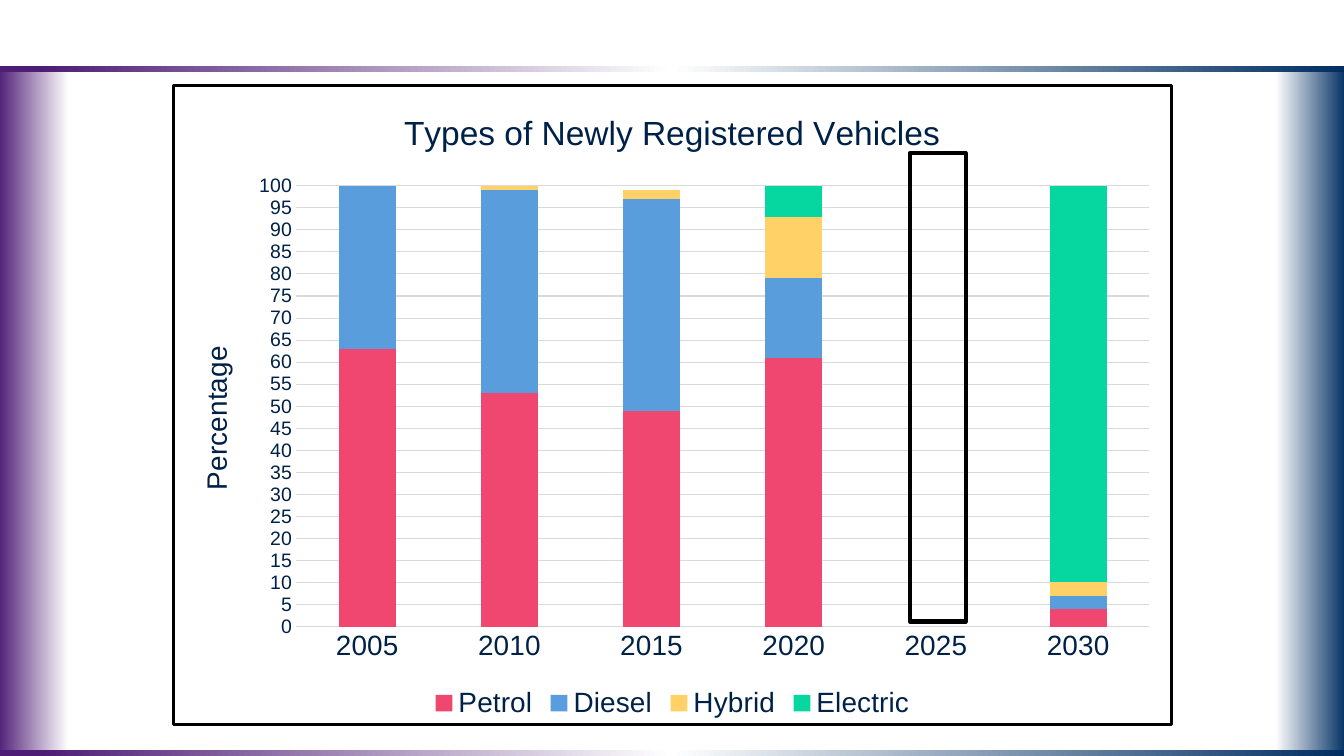
from pptx import Presentation
from pptx import util as u
from pptx.chart.data import CategoryChartData
from pptx.dml.color import RGBColor
from pptx.enum import chart as charts, shapes
from pptx.oxml import parse_xml
from pptx.oxml.ns import nsdecls, qn

PURPLE, WHITE, BLUE, NAVY, GREY, BLACK = "4D1C74", "FFFFFF", "002D61", "002147", "D9D9D9", "000000"
color = RGBColor.from_string


def style_font(font, size):
    font.name = "Arial"
    font.size = u.Pt(size)
    font.bold = False
    font.color.rgb = color(NAVY)


def place(element, index, **fractions):
    """Give a chart part a manual layout, in fractions of the chart's size."""
    old_layout = element.find(qn("c:layout"))
    if old_layout is not None:
        element.remove(old_layout)
    target = '<c:layoutTarget val="inner"/>' if "w" in fractions else ""
    modes = '<c:xMode val="edge"/><c:yMode val="edge"/>'
    values = "".join(f'<c:{key} val="{value}"/>' for key, value in fractions.items())
    element.insert(index, parse_xml(
        f'<c:layout {nsdecls("c")}><c:manualLayout>{target}{modes}{values}</c:manualLayout></c:layout>'))


presentation = Presentation()
presentation.slide_width, presentation.slide_height = u.Pt(960), u.Pt(540)
slide = presentation.slides.add_slide(presentation.slide_layouts[6])

# Gradient frame
bar_stops = [(3, PURPLE), (50, WHITE), (100, BLUE)]
frame = [
    (-2, 48.5, 51, 491, [(0, PURPLE), (100, WHITE)]),
    (911, 48.5, 51, 491, [(0, WHITE), (100, BLUE)]),
    (-1, 535.7, 962, 4.3, bar_stops),
    (-1, 47.3, 962, 4.3, bar_stops),
]
for left, top, width, height, stops in frame:
    band = slide.shapes.add_shape(shapes.MSO_SHAPE.RECTANGLE, *map(u.Pt, (left, top, width, height)))
    band.shadow.inherit = False
    band.line.fill.background()
    band.fill.gradient()
    band.fill.gradient_angle = 0
    stop_list = band._element.spPr.find(qn("a:gradFill")).find(qn("a:gsLst"))
    for old_stop in list(stop_list):
        stop_list.remove(old_stop)
    for position, hex_color in stops:
        stop_list.append(parse_xml(
            f'<a:gs {nsdecls("a")} pos="{position * 1000}"><a:srgbClr val="{hex_color}"/></a:gs>'))

# Stacked column chart
data = CategoryChartData()
data.categories = ["2005", "2010", "2015", "2020", "2025", "2030"]
vehicles = [
    ("Petrol", "EF476F", [63, 53, 49, 61, None, 4]),
    ("Diesel", "599DDC", [37, 46, 48, 18, None, 3]),
    ("Hybrid", "FFD166", [0, 1, 2, 14, None, 3]),
    ("Electric", "06D6A0", [0, 0, 0, 7, None, 90]),
]
for name, _, values in vehicles:
    data.add_series(name, values)
chart = slide.shapes.add_chart(
    charts.XL_CHART_TYPE.COLUMN_STACKED, u.Pt(122.8), u.Pt(60), u.Pt(715), u.Pt(458.6), data).chart
style_font(chart.font, 20)

plot = chart.plots[0]
plot.gap_width, plot.overlap = 150, 100
plot.vary_by_categories = False
for series, (_, hex_color, _) in zip(plot.series, vehicles):
    series.format.fill.solid()
    series.format.fill.fore_color.rgb = color(hex_color)

years, percentage = chart.category_axis, chart.value_axis
percentage.minimum_scale, percentage.maximum_scale, percentage.major_unit = 0, 100, 5
percentage.tick_labels.number_format = "0"
percentage.tick_labels.number_format_is_linked = False
percentage.format.line.fill.background()
for axis, size in ((years, 20), (percentage, 14)):
    axis.major_tick_mark = axis.minor_tick_mark = charts.XL_TICK_MARK.NONE
    style_font(axis.tick_labels.font, size)
    # A fixed rotation keeps every label, even when they are tight
    axis._element.find(qn("c:txPr")).find(qn("a:bodyPr")).set("rot", "0")
for line in (years.format.line, percentage.major_gridlines.format.line):
    line.color.rgb = color(GREY)
    line.width = u.Pt(0.75)

chart.has_title = True
titles = [
    (chart.chart_title, "Types of Newly Registered Vehicles", 24, 0.225, 0.03),
    (percentage.axis_title, "Percentage", 20, 0.02, 0.4),
]
for title, wording, size, x, y in titles:
    run = title.text_frame.paragraphs[0].add_run()
    run.text = wording
    style_font(run.font, size)
    place(title._element, 1, x=x, y=y)
percentage.axis_title.text_frame._txBody.bodyPr.set("rot", "-5400000")

chart.has_legend = True
chart.legend.position = charts.XL_LEGEND_POSITION.BOTTOM
chart.legend.include_in_layout = False
style_font(chart.legend.font, 20)

chart_space = chart._chartSpace
place(chart_space.chart.plotArea, 0, x=0.123, y=0.157, w=0.855, h=0.69)
chart_space.chart.addnext(parse_xml(
    f'<c:spPr {nsdecls("c", "a")}><a:noFill/><a:ln w="{u.Pt(2.25)}"><a:solidFill>'
    f'<a:srgbClr val="{BLACK}"/></a:solidFill></a:ln></c:spPr>'))

# Empty column to predict for 2025
prediction = slide.shapes.add_shape(
    shapes.MSO_SHAPE.RECTANGLE, u.Pt(650), u.Pt(109.4), u.Pt(39.8), u.Pt(334.6))
prediction.shadow.inherit = False
prediction.fill.background()
prediction.line.color.rgb = color(BLACK)
prediction.line.width = u.Pt(3)

presentation.save("out.pptx")
